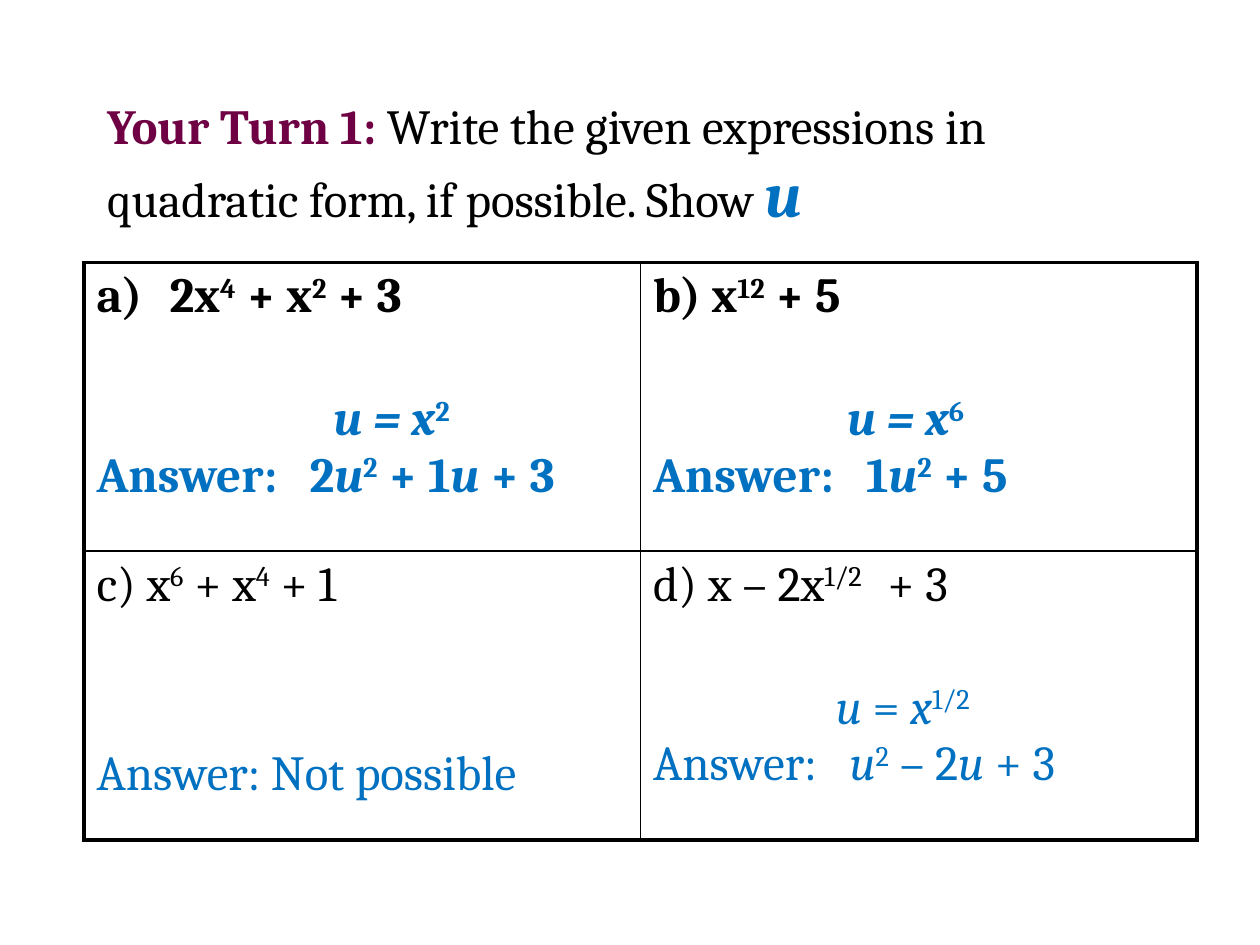
"""Build a slide with four quadratic-form exercises and their answers."""
import pptx
import pptx.dml.color
import pptx.enum.text
import pptx.oxml.ns
import pptx.util
from lxml import etree

theme = {
    "font": "Cambria", "size": 28, "large": 36, "line": 38,
    "ink": "000000", "plum": "6E0043", "blue": "0070C0",
    "thick": 2.25, "thin": 1,
}


def add_run(para, text, color, bold=False, style="", size=theme["size"]):
    run = para.add_run()
    run.text = text
    font = run.font
    font.name = theme["font"]
    font.size = pptx.util.Pt(size)
    font.bold = bold
    font.italic = "i" in style
    font.color.rgb = pptx.dml.color.RGBColor.from_string(color)
    if "^" in style:
        font._element.set("baseline", "30000")


def add_node(parent, tag, **attrs):
    node = etree.SubElement(parent, pptx.oxml.ns.qn("a:" + tag))
    for key, value in attrs.items():
        node.set(key, str(value))
    return node


deck = pptx.Presentation()
deck.slide_width = pptx.util.Inches(10)
deck.slide_height = pptx.util.Inches(7.5)
unit = deck.slide_width // 120
slide = deck.slides.add_slide(deck.slide_layouts[5])

title = slide.shapes.title
title.left, title.top = 9 * unit, 8 * unit
title.width, title.height = 102 * unit, 15 * unit
frame = title.text_frame
frame.vertical_anchor = pptx.enum.text.MSO_ANCHOR.MIDDLE
frame.auto_size = pptx.enum.text.MSO_AUTO_SIZE.TEXT_TO_FIT_SHAPE
head = frame.paragraphs[0]
head.alignment = pptx.enum.text.PP_ALIGN.LEFT
add_run(head, "Your Turn 1:", theme["plum"], True)
add_run(head, " Write the given expressions in quadratic form, if possible. Show ", theme["ink"])
add_run(head, "u", theme["blue"], True, "i", theme["large"])

tasks = [
    [
        [
            {"bullet": 0.58, "runs": [("2x", ""), ("4", "^"), (" + x", ""), ("2", "^"), (" + 3", "")]},
            {"gap": 1, "indent": 1.88, "runs": [("u = x", "i"), ("2", "^")]},
            {"stop": 1.69, "runs": [("Answer:\t2", ""), ("u", "i"), ("2", "^"), (" + 1", ""),
                                    ("u ", "i"), ("+ 3", "")]},
        ],
        [
            {"runs": [("b) x", ""), ("12", "^"), (" + 5", "")]},
            {"gap": 1, "indent": 1.54, "runs": [("u = x", "i"), ("6", "^")]},
            {"stop": 1.69, "runs": [("Answer:\t1", ""), ("u", "i"), ("2", "^"), (" + 5", "")]},
        ],
    ],
    [
        [
            {"runs": [("c) x", ""), ("6", "^"), (" + x", ""), ("4", "^"), (" + 1", "")]},
            {"gap": 2, "runs": [("Answer: Not possible", "")]},
        ],
        [
            {"stop": 1.86, "runs": [("d) x – 2x", ""), ("1/2", "^"), ("\t+ 3", "")]},
            {"gap": 1, "indent": 1.45, "runs": [("u", "i"), (" = ", ""), ("x", "i"), ("1/2", "^")]},
            {"stop": 1.56, "runs": [("Answer:\t", ""), ("u", "i"), ("2", "^"), (" – 2", ""),
                                    ("u ", "i"), ("+ 3", "")]},
        ],
    ],
]

table = slide.shapes.add_table(2, 2, 8 * unit, 25 * unit, 106 * unit, 55 * unit).table
table.first_row = False
table.horz_banding = False

for row, cells in enumerate(tasks):
    for col, lines in enumerate(cells):
        cell = table.cell(row, col)
        props = cell._tc.get_or_add_tcPr()
        outer = {"lnL": col == 0, "lnR": col == 1, "lnT": row == 0, "lnB": row == 1}
        for side, edge in outer.items():
            width = pptx.util.Pt(theme["thick"] if edge else theme["thin"])
            line = add_node(props, side, w=int(width))
            add_node(add_node(line, "solidFill"), "srgbClr", val=theme["ink"])
        cell.fill.background()

        for index, item in enumerate(lines):
            body = cell.text_frame
            para = body.add_paragraph() if index else body.paragraphs[0]
            para.space_before = pptx.util.Pt(theme["line"] * item.get("gap", 0))
            form = para._p.get_or_add_pPr()
            if "indent" in item:
                form.set("marL", str(int(pptx.util.Inches(item["indent"]))))
            if "bullet" in item:
                hang = int(pptx.util.Inches(item["bullet"]))
                form.set("marL", str(hang))
                form.set("indent", str(-hang))
                add_node(form, "buFont", typeface=theme["font"])
                add_node(form, "buAutoNum", type="alphaLcParenR")
            if "stop" in item:
                place = int(pptx.util.Inches(item["stop"]))
                add_node(add_node(form, "tabLst"), "tab", pos=place, algn="l")
            color = theme["blue"] if index else theme["ink"]
            for text, style in item["runs"]:
                add_run(para, text, color, row == 0, style)

deck.save("out.pptx")
